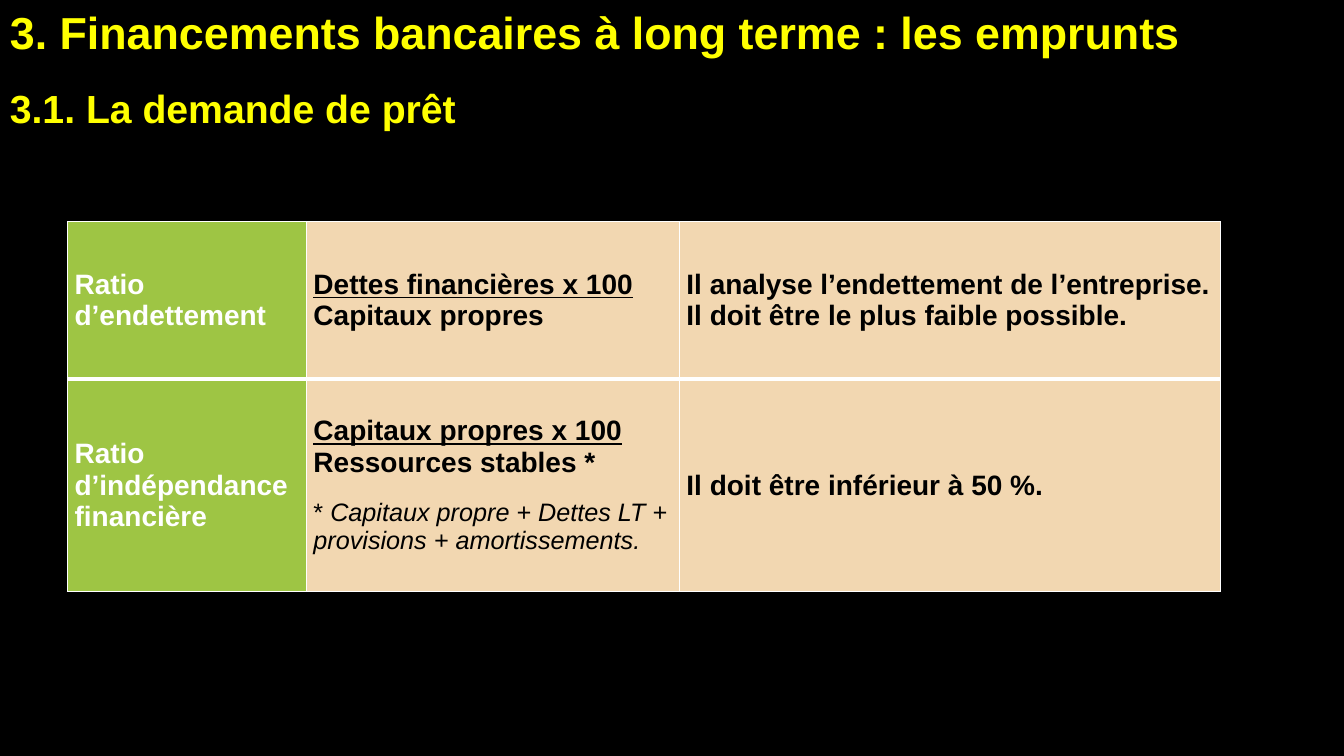
import pptx
import pptx.util
import pptx.dml.color
import pptx.enum.text
import pptx.oxml
import pptx.oxml.ns
from pptx.util import Cm

COLORS = {
    "background": "000000",
    "title": "FFFF00",
    "label": "9EC544",
    "body": "F2D7B1",
    "light": "FFFFFF",
    "dark": "000000",
}
FONT = "Arial"

BOLD = {"size": 20, "bold": True}
RATIO = {"size": 20, "bold": True, "underline": True}
NOTE = {"size": 18}
NOTE_ITALIC = {"size": 18, "italic": True}

HEADINGS = [
    (12, 6, [("3. Financements bancaires à long terme : les emprunts", {"size": 32, "bold": True})]),
    (12, 6, [("3.1. La demande de prêt", {"size": 28, "bold": True})]),
]
ROWS = [
    [
        [(0, 0, [("Ratio d’endettement", BOLD)])],
        [
            (3, 0, [("Dettes financières x 100", RATIO)]),
            (0, 3, [("Capitaux propres", BOLD)]),
        ],
        [(0, 0, [("Il analyse l’endettement de l’entreprise. Il doit être le plus faible possible.", BOLD)])],
    ],
    [
        [(0, 0, [("Ratio d’indépendance financière", BOLD)])],
        [
            (3, 0, [("Capitaux propres x 100", RATIO)]),
            (0, 3, [("Ressources stables *", BOLD)]),
            (12, 6, [
                ("* ", NOTE),
                ("Capitaux propre + Dettes LT + provisions + amortissements.", NOTE_ITALIC),
            ]),
        ],
        [(0, 0, [("Il doit être inférieur à 50 %.", BOLD)])],
    ],
]
COL_WIDTHS = [6.02, 9.4, 13.64]
ROW_HEIGHTS = [3.96, 5.36]
THIN, THICK = 1, 3


def rgb(name):
    return pptx.dml.color.RGBColor.from_string(COLORS[name])


def write(tf, paragraphs, color):
    tf.word_wrap = True
    for i, (before, after, runs) in enumerate(paragraphs):
        p = tf.paragraphs[0] if i == 0 else tf.add_paragraph()
        p.space_before = pptx.util.Pt(before)
        p.space_after = pptx.util.Pt(after)
        for text, style in runs:
            r = p.add_run()
            r.text = text
            r.font.name = FONT
            r.font.size = pptx.util.Pt(style["size"])
            r.font.bold = style.get("bold", False)
            r.font.italic = style.get("italic", False)
            r.font.underline = style.get("underline", False)
            r.font.color.rgb = rgb(color)


def set_borders(cell, widths):
    tcPr = cell._tc.get_or_add_tcPr()
    for i, (side, width) in enumerate(widths.items()):
        tcPr.insert(i, pptx.oxml.parse_xml(
            f'<a:ln{side} {pptx.oxml.ns.nsdecls("a")} w="{pptx.util.Pt(width)}">'
            f'<a:solidFill><a:srgbClr val="{COLORS["light"]}"/></a:solidFill>'
            f'<a:prstDash val="solid"/></a:ln{side}>'))


prs = pptx.Presentation()
prs.slide_width, prs.slide_height = Cm(33.87), Cm(19.05)
s = prs.slides.add_slide(prs.slide_layouts[6])
s.background.fill.solid()
s.background.fill.fore_color.rgb = rgb("background")

title = s.shapes.add_textbox(0, 0, Cm(30.76), Cm(3.45))
write(title.text_frame, HEADINGS, "title")

frame = s.shapes.add_table(len(ROWS), len(COL_WIDTHS), Cm(1.7), Cm(5.59),
                           Cm(sum(COL_WIDTHS)), Cm(sum(ROW_HEIGHTS)))
table = frame.table
table.first_row = table.horz_banding = False
for column, width in zip(table.columns, COL_WIDTHS):
    column.width = Cm(width)
for row, height in zip(table.rows, ROW_HEIGHTS):
    row.height = Cm(height)

for i, row in enumerate(ROWS):
    for j, paragraphs in enumerate(row):
        cell = table.cell(i, j)
        cell.margin_left = cell.margin_right = Cm(0.18)
        cell.margin_top = cell.margin_bottom = 0
        cell.vertical_anchor = pptx.enum.text.MSO_ANCHOR.MIDDLE
        cell.fill.solid()
        cell.fill.fore_color.rgb = rgb("label" if j == 0 else "body")
        write(cell.text_frame, paragraphs, "light" if j == 0 else "dark")
        set_borders(cell, {
            "L": THIN,
            "R": THIN,
            "T": THIN if i == 0 else THICK,
            "B": THICK if i == 0 else THIN,
        })

prs.save("out.pptx")
